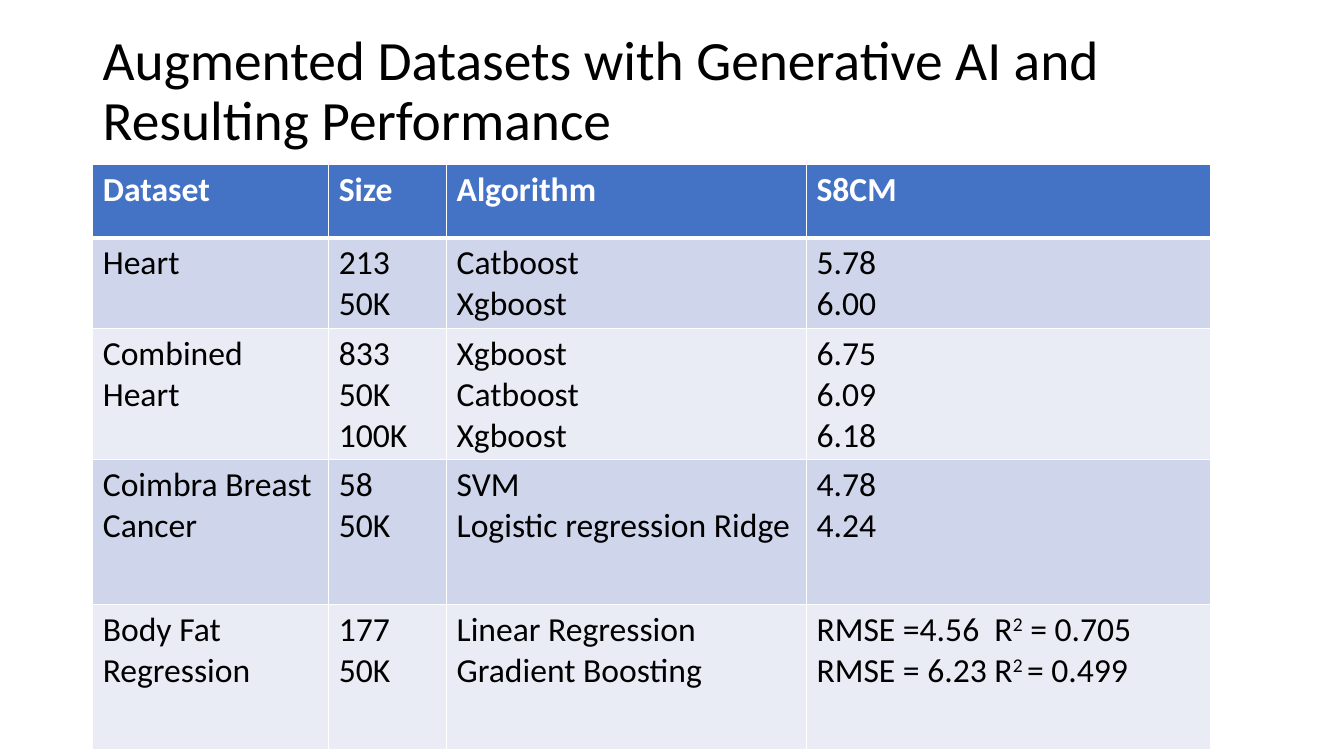
from lxml.etree import SubElement as Sub
from pptx import Presentation
from pptx.dml.color import RGBColor
from pptx.enum.text import MSO_ANCHOR as Anchor
from pptx.oxml.ns import qn
from pptx.util import Inches, Pt

# Content: cells hold lines, and ^ switches superscript on and off
TITLE = "Augmented Datasets with Generative AI and Resulting Performance"
ROWS = [
    ("Dataset", "Size", "Algorithm", "S8CM"),
    ("Heart", "213\n50K", "Catboost\nXgboost", "5.78\n6.00"),
    ("Combined Heart", "833\n50K\n100K", "Xgboost\nCatboost\nXgboost",
     "6.75\n6.09\n6.18"),
    ("Coimbra Breast Cancer", "58\n50K", "SVM\nLogistic regression Ridge",
     "4.78\n4.24"),
    ("Body Fat\nRegression", "177\n50K", "Linear Regression\nGradient Boosting",
     "RMSE =4.56  R^2^ = 0.705\nRMSE = 6.23 R^2 ^= 0.499"),
]
WIDE, HIGH = 13.33, 7.5
LEFT, TOP = 0.92, 1.63
COLS = [2.34, 1.17, 3.57, 4.01]
TALL = [0.73, 0.88, 1.27, 1.44, 1.44]
HEAD, BANDS = "4472C4", ["E9EBF5", "CFD5EA"]
WHITE, BLACK = "FFFFFF", "000000"


def color(code):
    return RGBColor.from_string(code)


def style(run, size, code, bold=False):
    font = run.font
    font.name, font.size, font.bold = "Calibri", Pt(size), bold
    font.color.rgb = color(code)


def border(cell, base):
    """Draw white cell edges, with the given bottom width in points."""
    props = cell._tc.get_or_add_tcPr()
    for tag, width in (("lnL", 1), ("lnR", 1), ("lnT", 1), ("lnB", base)):
        line = Sub(props, qn("a:" + tag), w=str(Pt(width)))
        Sub(Sub(line, qn("a:solidFill")), qn("a:srgbClr"), val=WHITE)


def write(para, text, code, bold):
    for i, part in enumerate(text.split("^")):
        run = para.add_run()
        run.text = part
        style(run, 24, code, bold)
        if i % 2:
            run._r.get_or_add_rPr().set("baseline", "30000")


def fill_cell(cell, text, row):
    head = row == 0
    above = 3 if head else 1
    border(cell, above)
    cell.fill.solid()
    cell.fill.fore_color.rgb = color(HEAD if head else BANDS[row % 2])
    frame = cell.text_frame
    for i, line in enumerate(text.split("\n")):
        para = frame.add_paragraph() if i else frame.paragraphs[0]
        write(para, line, WHITE if head else BLACK, head)


def add_title(slide):
    box = slide.shapes.add_textbox(
        Inches(LEFT), Inches(0.4), Inches(WIDE - 2 * LEFT), Inches(1.04))
    frame = box.text_frame
    frame.word_wrap = True
    frame.vertical_anchor = Anchor.MIDDLE
    frame.text = TITLE
    para = frame.paragraphs[0]
    para.line_spacing = 0.9
    style(para.runs[0], 39.6, BLACK)


def add_grid(slide):
    grid = slide.shapes.add_table(
        len(ROWS), len(COLS), Inches(LEFT), Inches(TOP),
        Inches(sum(COLS)), Inches(sum(TALL))).table
    for col, width in zip(grid.columns, COLS):
        col.width = Inches(width)
    for r, (row, height) in enumerate(zip(ROWS, TALL)):
        grid.rows[r].height = Inches(height)
        for c, text in enumerate(row):
            fill_cell(grid.cell(r, c), text, r)


def main():
    deck = Presentation()
    deck.slide_width, deck.slide_height = Inches(WIDE), Inches(HIGH)
    slide = deck.slides.add_slide(deck.slide_layouts[6])
    add_title(slide)
    add_grid(slide)
    deck.save("out.pptx")


if __name__ == "__main__":
    main()
